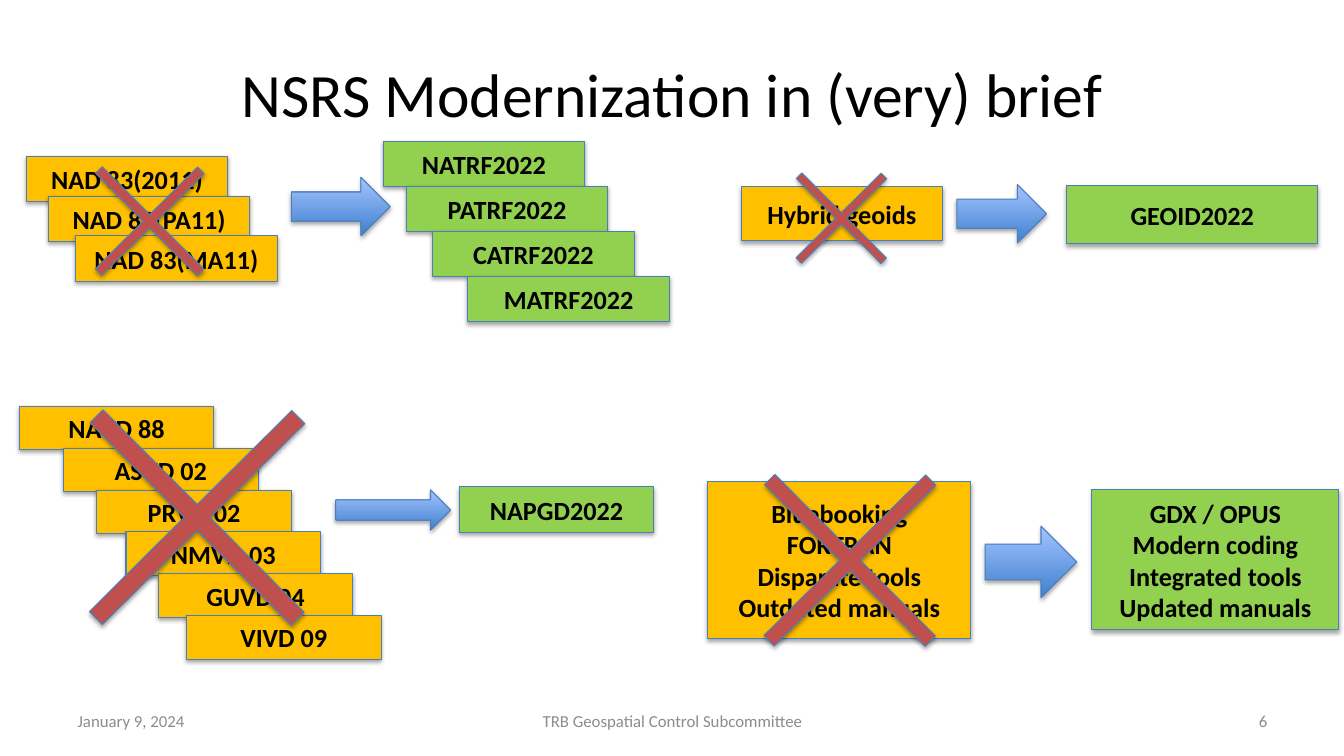
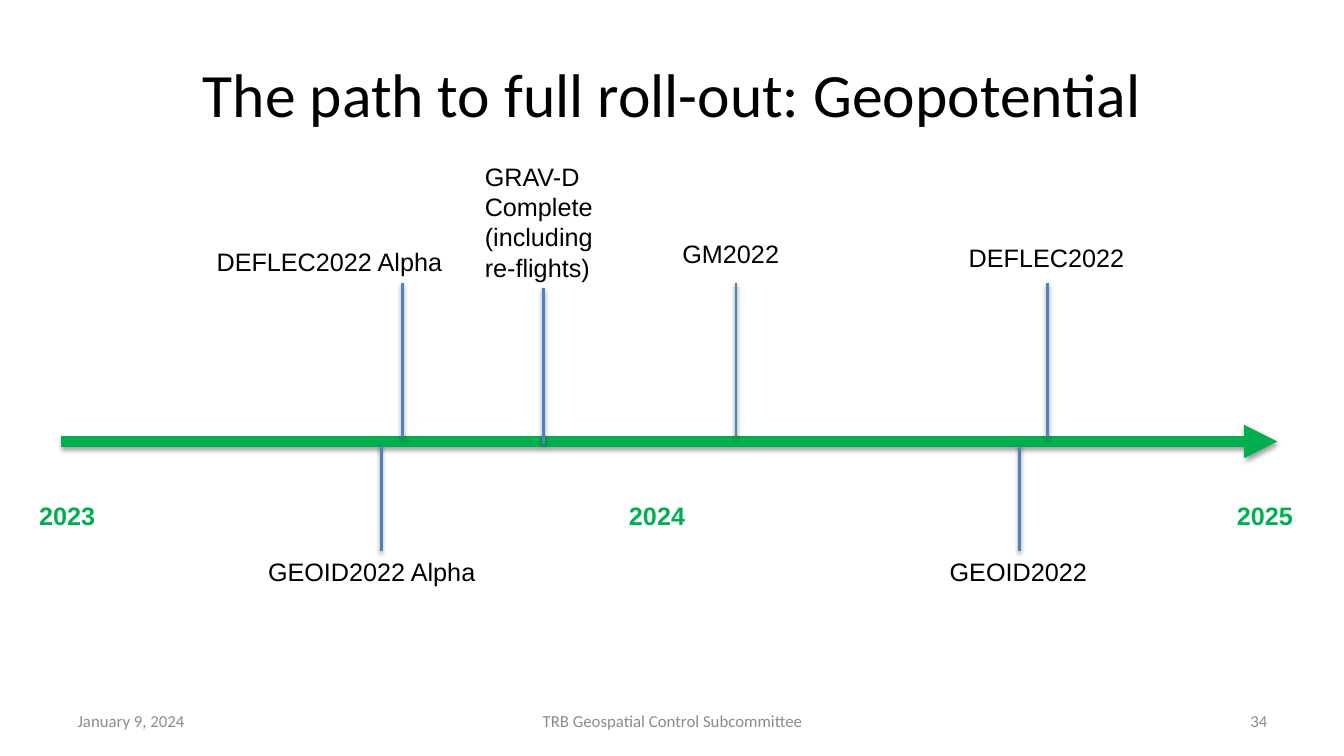
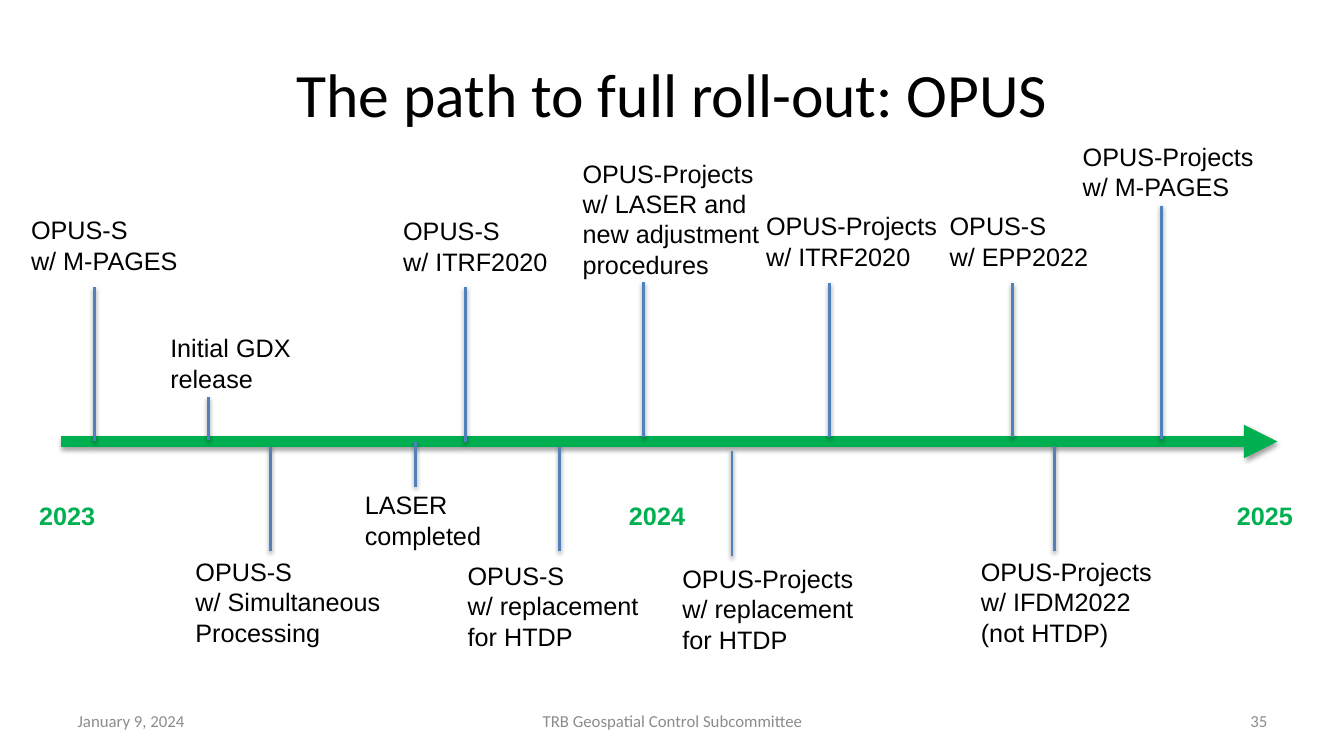
from copy import deepcopy

from lxml.etree import SubElement
from pptx import Presentation
from pptx.dml.color import RGBColor
from pptx.enum.shapes import MSO_CONNECTOR as CONN, MSO_SHAPE as SHAPE
from pptx.enum.text import MSO_ANCHOR as ANCHOR, MSO_AUTO_SIZE as AUTO, PP_ALIGN as ALIGN
from pptx.oxml.ns import qn
from pptx.util import Inches, Pt

CELL = Inches(0.1)
COLORS = {"old": "FFC000", "new": "92D050", "cross": "C0504D", "edge": "4B7EBC",
          "arrow_low": "3F80CE", "arrow_high": "A4C4FF", "axis": "00B050",
          "tick": "4F81BD", "text": "000000", "footer": "8C8C8C"}
STYLES = {
    "title": ({"size": Pt(44), "name": "Calibri"}, "text"),
    "footer": ({"size": Pt(12), "name": "Calibri"}, "footer"),
    "box": ({"size": Pt(18.7), "name": "Calibri", "bold": True}, "text"),
    "event": ({"size": Pt(18), "name": "Arial"}, "text"),
    "year": ({"size": Pt(18), "name": "Arial", "bold": True}, "axis"),
}
FRAME = {0: (6.7, 3, 120, 12.5), 10: (6.7, 69.5, 31.1, 4),
         11: (45.6, 69.5, 42.2, 4), 12: (95.6, 69.5, 31.1, 4)}

SWAPS = [
    {"origin": (2.6, 14),
     "old": (["NAD 83(2011)", "NAD 83(PA11)", "NAD 83(MA11)"],
             [0, 2.2, 4.9], 1.5, 3.95, 20, 4.5),
     "cross": (5.1, 0.8, 14.3), "arrow": (26.3, 3.6, 9.8, 5.8),
     "new": (["NATRF2022", "PATRF2022", "CATRF2022", "MATRF2022"],
             [35.4, 37.7, 40.3, 43.8], 0, 4.47, 20, 4.5)},
    {"origin": (73.5, 15.7),
     "old": (["Hybrid geoids"], [0], 2.8, 0, 20, 5.4),
     "cross": (4, 0, 11.9), "arrow": (21.4, 2.6, 8.9, 5.8),
     "new": (["GEOID2022"], [32.3], 2.7, 0, 24.9, 5.8)},
    {"origin": (1.9, 37.2),
     "old": (["NAVD 88", "ASVD 02", "PRVD 02", "NMVD 03", "GUVD 04", "VIVD 09"],
             [0, 4.4, 7.7, 10.6, 13.8, 16.6], 3.1, 4.16, 19.3, 4.3),
     "cross": (3.5, 0, 28.3), "arrow": (31.4, 11.4, 11.4, 4),
     "new": (["NAPGD2022"], [43.7], 11.1, 0, 19.2, 4.5)},
    {"origin": (70.2, 44.3),
     "old": (["Bluebooking\nFORTRAN\nDisparate tools\nOutdated manuals"],
             [0], 3.5, 0, 26.1, 15.5),
     "cross": (2.8, 0, 22.6), "arrow": (27.5, 7.9, 9.1, 7.1),
     "new": (["GDX / OPUS\nModern coding\nIntegrated tools\nUpdated manuals"],
             [38.1], 4.3, 0, 24.5, 13.9)},
]

TIMELINE_BOX = (0, 43.8)
YEARS = [("2023", 2.9), ("2024", 61.4), ("2025", 121.7)]
GEOPOTENTIAL = [
    ("GEOID2022 Alpha", 25.6, 10.9, 22.8, 37.8, 0.4, 10.9),
    ("GRAV-D\nComplete\n(including\nre-flights)", 47.1, -28.3, 13.5, 53.9, 0.2, -15.2),
    ("DEFLEC2022", 95.1, -20.2, 17.6, 103.9, -0.4, -15.7),
    ("GEOID2022", 93.2, 10.9, 15.8, 101.1, 0.4, 10.9),
    ("GM2022", 66.7, -20.6, 11.7, 73, -0.4, -15.7),
    ("DEFLEC2022 Alpha", 20.5, -19.9, 24.6, 39.9, -0.4, -15.7),
]
OPUS = [
    ("OPUS-S\nw/ M-PAGES", 2.1, -23, 16.7, 9.4, 0, -15.3),
    ("OPUS-S\nw/ Simultaneous\nProcessing", 18.4, 10.9, 20.5, 26.8, 0.5, 10.9),
    ("OPUS-S\nw/ replacement\nfor HTDP", 45.4, 11.3, 19.1, 55.5, 0.5, 10.9),
    ("OPUS-S\nw/ ITRF2020", 39, -22.9, 16.5, 46.2, 0.1, -15.3),
    ("OPUS-Projects\nw/ M-PAGES", 106.4, -30.3, 19.1, 115.2, -0.2, -23.4),
    ("OPUS-Projects\nw/ replacement\nfor HTDP", 66.7, 11.6, 19.1, 72.6, 0.9, 11.4),
    ("OPUS-Projects\nw/ ITRF2020", 75, -23.4, 19.1, 82.3, -0.4, -15.7),
    ("OPUS-S\nw/ EPP2022", 93.2, -23.4, 15.9, 100.4, -0.4, -15.7),
    ("OPUS-Projects\nw/ IFDM2022\n(not HTDP)", 96.3, 10.9, 19.1, 104.6, 0.4, 10.9),
    ("OPUS-Projects\nw/ LASER and\nnew adjustment\nprocedures",
     56.8, -28.6, 20.8, 63.8, -0.4, -15.8),
    ("Initial GDX\nrelease", 15.9, -11.3, 14.8, 20.7, -0.1, -4.4),
    ("LASER\ncompleted", 35.2, 4.3, 13.7, 41.2, 0.1, 4.5),
]


def cells(*values):
    """Turn grid cells into slide lengths."""
    return [round(v * CELL) for v in values]


def rgb(key):
    """Look up a named colour."""
    return RGBColor.from_string(COLORS[key])


def write(sp, text, style, align=ALIGN.LEFT):
    """Fill a shape with text, one paragraph a line, in a named style."""
    font, color = STYLES[style]
    sp.text_frame.text = text
    for p in sp.text_frame.paragraphs:
        p.alignment = align
        for r in p.runs:
            for key, value in font.items():
                setattr(r.font, key, value)
            r.font.color.rgb = rgb(color)


def set_layout(prs):
    """Place the title and footers on the layout that all slides share."""
    layout = prs.slide_layouts.get_by_name("Title Only")
    for ph in layout.placeholders:
        box = cells(*FRAME[ph.placeholder_format.idx])
        for key, value in zip(("left", "top", "width", "height"), box):
            setattr(ph, key, value)
    return layout


def add_slide(prs, layout, title, number):
    """Add a slide with its title, date, footer and number."""
    s = prs.slides.add_slide(layout)
    write(s.shapes.title, title, "title", ALIGN.CENTER)
    footers = {10: ("January 9, 2024", ALIGN.LEFT),
               11: ("TRB Geospatial Control Subcommittee", ALIGN.CENTER),
               12: (number, ALIGN.RIGHT)}
    for ph in layout.placeholders:
        if ph.placeholder_format.idx in footers:
            s.shapes._spTree.append(deepcopy(ph._element))
    for ph in s.placeholders:
        if ph.placeholder_format.idx in footers:
            text, align = footers[ph.placeholder_format.idx]
            write(ph, text, "footer", align)
    return s


def add_figure(s, kind, box, fill=None):
    """Add an edged preset shape that keeps the theme's soft shadow."""
    sp = s.shapes.add_shape(kind, *cells(*box))
    sp.line.color.rgb = rgb("edge")
    sp.line.width = Pt(0.75)
    if fill:
        sp.fill.solid()
        sp.fill.fore_color.rgb = rgb(fill)
    return sp


def add_stack(s, x, y, fill, labels, lefts, top, step, w, h):
    """Add overlapping labelled boxes that descend by an equal step."""
    for i, (label, left) in enumerate(zip(labels, lefts)):
        sp = add_figure(s, SHAPE.RECTANGLE, (x + left, y + top + i * step, w, h), fill)
        sp.text_frame.vertical_anchor = ANCHOR.MIDDLE
        write(sp, label, "box", ALIGN.CENTER)


def add_swap(s, origin, old, cross, arrow, new):
    """Show crossed-out old items, an arrow and the new items."""
    x, y = origin
    add_stack(s, x, y, "old", *old)
    add_stack(s, x, y, "new", *new)
    left, top, w, h = arrow
    sp = add_figure(s, SHAPE.RIGHT_ARROW, (x + left, y + top, w, h))
    sp.fill.gradient()
    sp.fill.gradient_angle = 90
    for stop, key in zip(sp.fill.gradient_stops, ("arrow_low", "arrow_high")):
        stop.color.rgb = rgb(key)
    left, top, size = cross
    sp = add_figure(s, SHAPE.CROSS, (x + left, y + top, size, size), "cross")
    sp.adjustments[0] = 0.468
    sp.rotation = 45.2


def add_line(s, ends, color, width):
    """Add a straight line that keeps the theme's soft shadow."""
    line = s.shapes.add_connector(CONN.STRAIGHT, *cells(*ends))
    line.line.color.rgb = rgb(color)
    line.line.width = Pt(width)
    return line


def add_label(s, x, y, w, text, style):
    """Add a text box whose height follows its number of lines."""
    sp = s.shapes.add_textbox(*cells(x, y, w, 1 + 3.03 * len(text.split("\n"))))
    sp.text_frame.word_wrap = False
    sp.text_frame.auto_size = AUTO.SHAPE_TO_FIT_TEXT
    write(sp, text, style)


def add_timeline(s, box, events):
    """Draw the axis, its years and the events, with heights from the axis."""
    x, y = box
    axis = add_line(s, (x + 6.1, y, x + 126.7, y), "axis", 8)
    SubElement(axis.line._get_or_add_ln(), qn("a:tailEnd"), type="triangle")
    for year, left in YEARS:
        add_label(s, x + left, y + 5.3, 7.6, year, "year")
    for text, left, top, w, tick, near, far in events:
        add_line(s, (x + tick, y + far, x + tick, y + near), "tick", 2)
        add_label(s, x + left, y + top, w, text, "event")


def main():
    """Build and save the three slides."""
    prs = Presentation()
    prs.slide_width, prs.slide_height = Inches(13.33), Inches(7.5)
    layout = set_layout(prs)
    s = add_slide(prs, layout, "NSRS Modernization in (very) brief", "6")
    for swap in SWAPS:
        add_swap(s, **swap)
    for topic, number, events in (("Geopotential", "34", GEOPOTENTIAL), ("OPUS", "35", OPUS)):
        s = add_slide(prs, layout, f"The path to full roll-out: {topic}", number)
        add_timeline(s, TIMELINE_BOX, events)
    prs.save("out.pptx")


if __name__ == "__main__":
    main()
